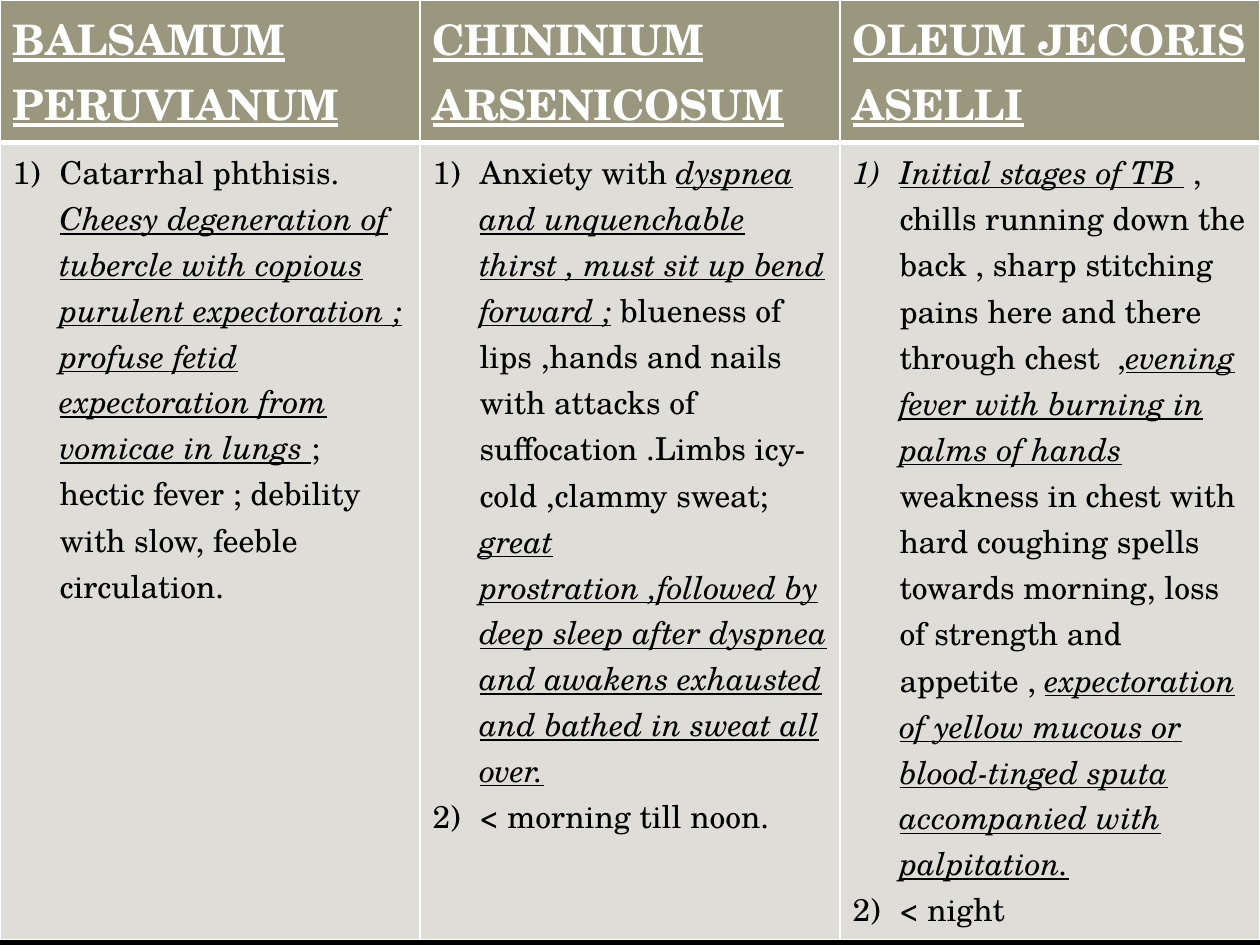
from lxml.etree import SubElement
from pptx import Presentation
from pptx.dml.color import RGBColor
from pptx.oxml import parse_xml
from pptx.oxml.ns import nsdecls, qn
from pptx.util import Emu, Pt

PX = 914400 / 126
WIDTH, HEIGHT = 1260, 945
HEAD_H, BODY_H = 142, 797
INDENT = 47

BLACK = RGBColor(0x00, 0x00, 0x00)
WHITE = RGBColor(0xFF, 0xFF, 0xFF)
OLIVE = RGBColor(0x99, 0x98, 0x7F)
PALE = RGBColor(0xDE, 0xDD, 0xD8)

FONT = "TeX Gyre Schola"
HEAD = {"name": FONT, "size": Pt(24), "bold": True, "underline": True}
PLAIN = {"name": FONT, "size": Pt(18), "bold": False,
         "italic": False, "underline": False}
KEY = PLAIN | {"italic": True, "underline": True}

# Words between asterisks are key symptoms.
REMEDIES = {
    "BALSAMUM PERUVIANUM": [
        "Catarrhal phthisis. *Cheesy degeneration of tubercle with copious "
        "purulent expectoration ; profuse fetid expectoration from vomicae "
        "in lungs *; hectic fever ; debility with slow, feeble circulation.",
    ],
    "CHININIUM ARSENICOSUM": [
        "Anxiety with *dyspnea and unquenchable thirst , must sit up bend "
        "forward ;* blueness of lips ,hands and nails with attacks of "
        "suffocation .Limbs icy-cold ,clammy sweat; *great prostration "
        ",followed by deep sleep after dyspnea and awakens exhausted and "
        "bathed in sweat all over.*",
        "< morning till noon.",
    ],
    "OLEUM JECORIS ASELLI": [
        "*Initial stages of TB * , chills running down the back , sharp "
        "stitching pains here and there through chest  ,*evening fever with "
        "burning in palms of hands *weakness in chest with hard coughing "
        "spells towards morning, loss of strength and appetite , "
        "*expectoration of yellow mucous or blood-tinged sputa accompanied "
        "with palpitation.*",
        "< night",
    ],
}


def px(n):
    return Emu(round(n * PX))


def add_run(p, text, fmt, color):
    r = p.add_run()
    r.text = text
    for name, value in fmt.items():
        setattr(r.font, name, value)
    r.font.color.rgb = color


def number(p):
    """Give the paragraph a hanging 1) 2) 3) number."""
    pPr = p._p.get_or_add_pPr()
    pPr.set("marL", str(px(INDENT)))
    pPr.set("indent", str(-px(INDENT)))
    SubElement(pPr, qn("a:buFont"), typeface="+mj-lt")
    SubElement(pPr, qn("a:buAutoNum"), type="arabicParenR")


def style_cell(cell, fill, **widths):
    """Fill the cell and draw white borders, 1 pt unless widths says otherwise."""
    cell.fill.solid()
    cell.fill.fore_color.rgb = fill
    tcPr = cell._tc.get_or_add_tcPr()
    for i, side in enumerate("LRTB"):
        tcPr.insert(i, parse_xml(
            f'<a:ln{side} {nsdecls("a")} w="{Pt(widths.get(side, 1))}">'
            f'<a:solidFill><a:srgbClr val="{WHITE}"/></a:solidFill>'
            f'</a:ln{side}>'))


def fill_header(cell, title):
    style_cell(cell, OLIVE, B=3)
    add_run(cell.text_frame.paragraphs[0], title, HEAD, WHITE)


def fill_body(cell, items):
    style_cell(cell, PALE, T=3)
    tf = cell.text_frame
    for i, item in enumerate(items):
        p = tf.add_paragraph() if i else tf.paragraphs[0]
        number(p)
        for j, part in enumerate(item.split("*")):
            if part:
                add_run(p, part, KEY if j % 2 else PLAIN, BLACK)


def add_remedy_table(s):
    table = s.shapes.add_table(2, len(REMEDIES), 0, 0, px(WIDTH),
                               px(HEAD_H + BODY_H)).table
    for row, height in zip(table.rows, (HEAD_H, BODY_H)):
        row.height = px(height)
    for col, (title, items) in enumerate(REMEDIES.items()):
        table.columns[col].width = px(WIDTH / len(REMEDIES))
        fill_header(table.cell(0, col), title)
        fill_body(table.cell(1, col), items)


def main():
    prs = Presentation()
    prs.slide_width, prs.slide_height = px(WIDTH), px(HEIGHT)
    s = prs.slides.add_slide(prs.slide_layouts[6])
    s.background.fill.solid()
    s.background.fill.fore_color.rgb = BLACK
    add_remedy_table(s)
    prs.save("out.pptx")


if __name__ == "__main__":
    main()
